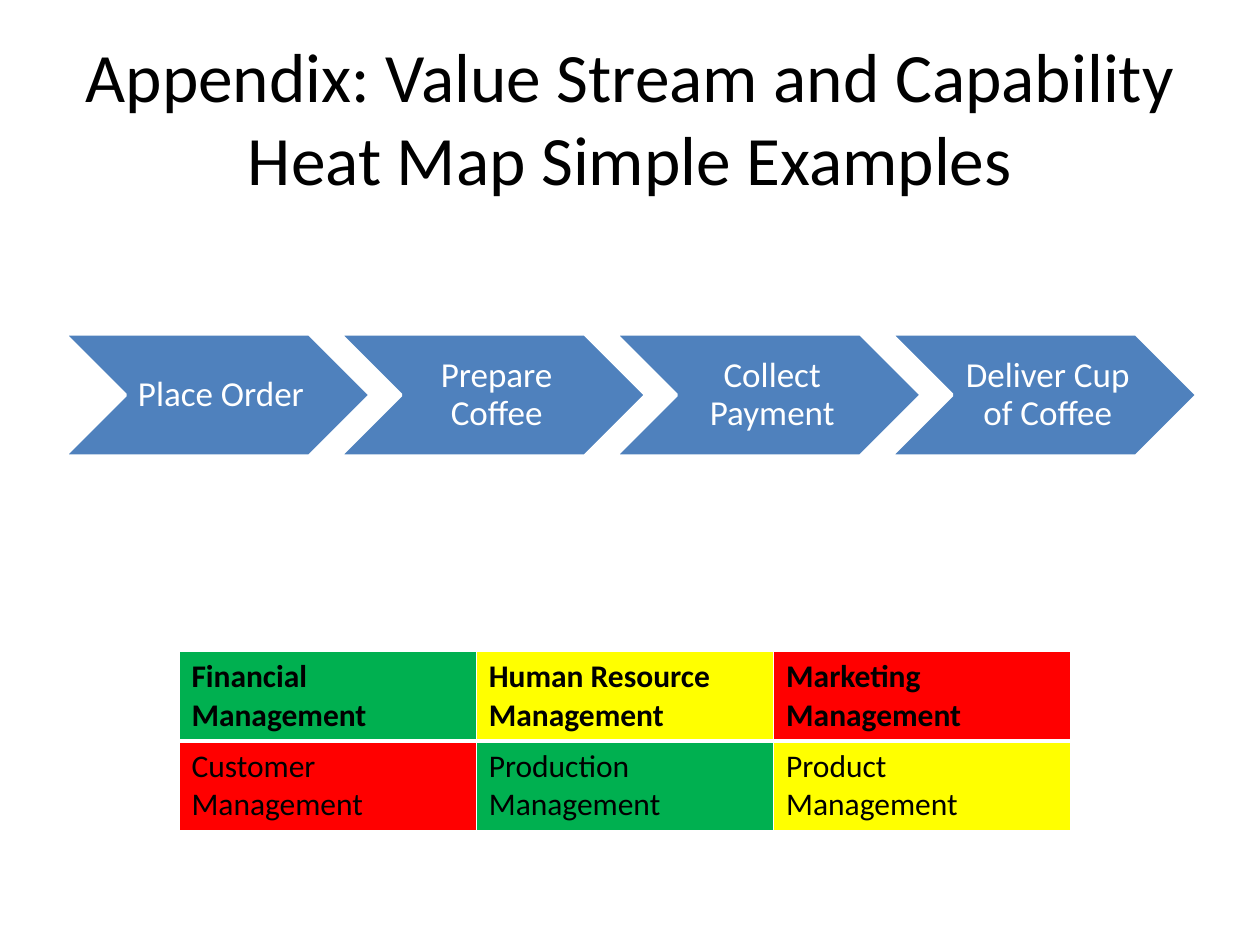
from dataclasses import dataclass

from lxml import etree
from pptx import Presentation
from pptx import util as u
from pptx.dml.color import RGBColor
from pptx.enum import shapes, text
from pptx.oxml import ns


@dataclass(frozen=True)
class Theme:
    font: str = "Calibri"
    ink: str = "000000"
    paper: str = "FFFFFF"
    step: str = "4F81BD"
    good: str = "00B050"
    fair: str = "FFFF00"
    poor: str = "FF0000"
    title_size: float = 39.6
    step_size: float = 20
    cell_size: float = 18


THEME = Theme()
STEPS = ["Place Order", "Prepare Coffee", "Collect Payment", "Deliver Cup of Coffee"]
HEAT_MAP = [
    [
        ("Financial Management", THEME.good),
        ("Human Resource Management", THEME.fair),
        ("Marketing Management", THEME.poor),
    ],
    [
        ("Customer Management", THEME.poor),
        ("Production Management", THEME.good),
        ("Product Management", THEME.fair),
    ],
]


def write(tf, content, *, size, color, font, bold=False, align=None, spacing=None):
    p = tf.paragraphs[0]
    p.alignment = align
    p.line_spacing = spacing
    r = p.add_run()
    r.text = content
    r.font.name = font
    r.font.size = u.Pt(size)
    r.font.bold = bold
    r.font.color.rgb = RGBColor.from_string(color)


def set_border(cell, side, color, width):
    ln = etree.Element(ns.qn(f"a:{side}"), w=str(u.Pt(width)))
    fill = etree.SubElement(ln, ns.qn("a:solidFill"))
    etree.SubElement(fill, ns.qn("a:srgbClr"), val=color)
    return ln


class SlideBuilder:
    def __init__(self, prs, theme):
        self.theme = theme
        self.s = prs.slides.add_slide(prs.slide_layouts[5])

    def title(self, content, x, y, w, h):
        sp = self.s.shapes.title
        sp.left, sp.top, sp.width, sp.height = map(u.Inches, (x, y, w, h))
        tf = sp.text_frame
        tf.word_wrap = True
        tf.auto_size = text.MSO_AUTO_SIZE.NONE
        tf.vertical_anchor = text.MSO_ANCHOR.MIDDLE
        write(tf, content, size=self.theme.title_size, color=self.theme.ink,
              font=self.theme.font, align=text.PP_ALIGN.CENTER)

    def chevron(self, content, x, y, w, h):
        sp = self.s.shapes.add_shape(
            shapes.MSO_SHAPE.CHEVRON, *map(u.Inches, (x, y, w, h)))
        sp.shadow.inherit = False
        sp.fill.solid()
        sp.fill.fore_color.rgb = RGBColor.from_string(self.theme.step)
        sp.line.color.rgb = RGBColor.from_string(self.theme.paper)
        sp.line.width = u.Pt(2)
        tf = sp.text_frame
        tf.word_wrap = True
        tf.vertical_anchor = text.MSO_ANCHOR.MIDDLE
        tf.margin_left = u.Inches(0.09)
        tf.margin_top = tf.margin_right = tf.margin_bottom = u.Inches(0.03)
        write(tf, content, size=self.theme.step_size, color=self.theme.paper,
              font=self.theme.font, align=text.PP_ALIGN.CENTER, spacing=0.9)

    def chevrons(self, steps, x, y, w, h, overlap=0.1):
        for i, step in enumerate(steps):
            self.chevron(step, x + i * w * (1 - overlap), y, w, h)

    def heat_map(self, rows, x, y, w, h):
        table = self.s.shapes.add_table(
            len(rows), len(rows[0]), *map(u.Inches, (x, y, w, h))).table
        table.horz_banding = False
        for i, row in enumerate(rows):
            for j, (label, color) in enumerate(row):
                self.cell(table.cell(i, j), label, color, header=i == 0)

    def cell(self, cell, label, color, header):
        write(cell.text_frame, label, size=self.theme.cell_size,
              color=self.theme.ink, font=self.theme.font, bold=header)
        top, bottom = (1, 3) if header else (3, 1)
        widths = {"lnL": 1, "lnR": 1, "lnT": top, "lnB": bottom}
        tc_pr = cell._tc.get_or_add_tcPr()
        for side, width in widths.items():
            tc_pr.append(set_border(cell, side, self.theme.paper, width))
        cell.fill.solid()
        cell.fill.fore_color.rgb = RGBColor.from_string(color)


def main():
    prs = Presentation()
    prs.slide_width, prs.slide_height = u.Inches(10), u.Inches(7.5)
    slide = SlideBuilder(prs, THEME)
    slide.title("Appendix: Value Stream and Capability Heat Map Simple Examples",
                0.5, 0.3, 9, 1.25)
    slide.chevrons(STEPS, 0.51, 2.65, 2.43, 0.97)
    slide.heat_map(HEAT_MAP, 1.42, 5.17, 7.08, 1.4)
    prs.save("out.pptx")


if __name__ == "__main__":
    main()
